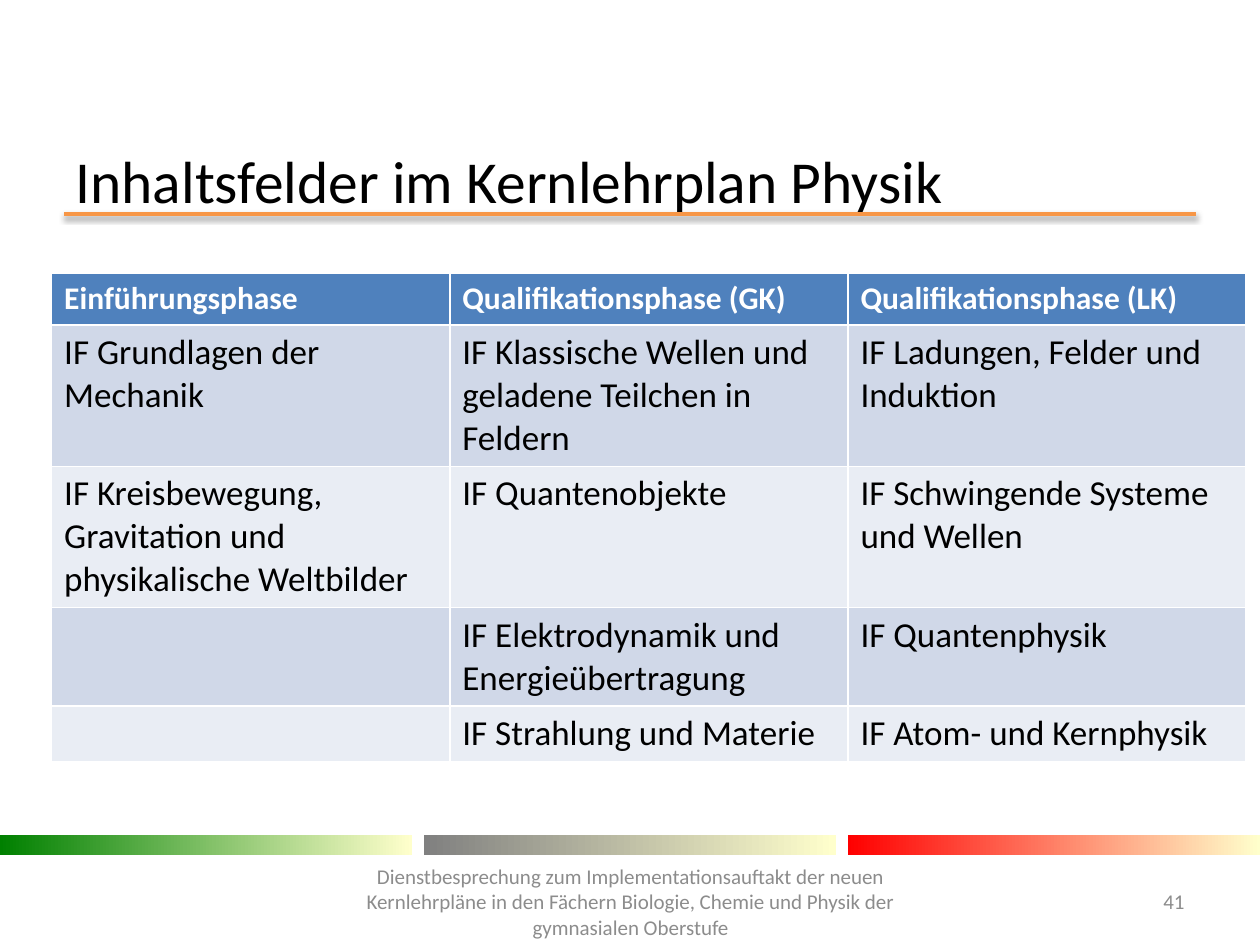
from dataclasses import dataclass

from lxml import etree
from pptx import Presentation
from pptx.dml.color import RGBColor
from pptx.enum.shapes import MSO_CONNECTOR, MSO_SHAPE
from pptx.enum.text import MSO_ANCHOR, PP_ALIGN
from pptx.oxml.ns import qn
from pptx.util import Inches, Pt

LEFT, CENTER, RIGHT = PP_ALIGN.LEFT, PP_ALIGN.CENTER, PP_ALIGN.RIGHT
TOP, MIDDLE = MSO_ANCHOR.TOP, MSO_ANCHOR.MIDDLE
RECTANGLE, STRAIGHT = MSO_SHAPE.RECTANGLE, MSO_CONNECTOR.STRAIGHT
TITLE_ONLY = 5
WIDTH, HEIGHT = 10, 7.5


@dataclass(frozen=True)
class Theme:
    font: str = "Calibri"
    text: str = "000000"
    muted: str = "8C8C8C"
    accent: str = "F79646"
    header: str = "4F81BD"
    header_text: str = "FFFFFF"
    bands: tuple = ("D0D8E8", "E9EDF4")
    strips: tuple = ("008000", "808080", "FF0000")
    strip_end: str = "FFFFCC"
    title_size: int = 34
    header_size: int = 18
    body_size: int = 20
    footer_size: int = 12


THEME = Theme()

ROWS = [
    ("Einführungsphase", "Qualifikationsphase (GK)", "Qualifikationsphase (LK)"),
    ("IF Grundlagen der Mechanik",
     "IF Klassische Wellen und geladene Teilchen in Feldern",
     "IF Ladungen, Felder und Induktion"),
    ("IF Kreisbewegung, Gravitation und physikalische Weltbilder",
     "IF Quantenobjekte",
     "IF Schwingende Systeme und Wellen"),
    ("", "IF Elektrodynamik und Energieübertragung", "IF Quantenphysik"),
    ("", "IF Strahlung und Materie", "IF Atom- und Kernphysik"),
]
ROW_HEIGHTS = (0.41, 1.11, 1.12, 0.78, 0.43)
FOOTER = ("Dienstbesprechung zum Implementationsauftakt der neuen Kernlehrpläne "
          "in den Fächern Biologie, Chemie und Physik der gymnasialen Oberstufe")


def rgb(color):
    return RGBColor.from_string(color)


def write(tf, text, *, size, color=THEME.text, bold=False, align=LEFT, anchor=TOP):
    tf.word_wrap = True
    tf.vertical_anchor = anchor
    p = tf.paragraphs[0]
    p.alignment = align
    r = p.add_run()
    r.text = text
    r.font.name, r.font.size, r.font.bold = THEME.font, Pt(size), bold
    r.font.color.rgb = rgb(color)


def add_title(s, text):
    title = s.shapes.title
    title.left, title.top = Inches(0.5), Inches(1.23)
    title.width, title.height = Inches(WIDTH - 1), Inches(0.39)
    write(title.text_frame, text, size=THEME.title_size, anchor=MIDDLE)


def add_rule(s, margin, y):
    """Draw the line under the title, with its soft shadow."""
    line = s.shapes.add_connector(STRAIGHT, Inches(margin), Inches(y),
                                  Inches(WIDTH - margin), Inches(y))
    line.line.color.rgb = rgb(THEME.accent)
    line.line.width = Pt(2)
    sp_pr = line.line._get_or_add_ln().getparent()
    effects = etree.SubElement(sp_pr, qn("a:effectLst"))
    shadow = etree.SubElement(effects, qn("a:outerShdw"), blurRad="40000",
                              dist="20000", dir="5400000", rotWithShape="0")
    color = etree.SubElement(shadow, qn("a:srgbClr"), val="000000")
    etree.SubElement(color, qn("a:alpha"), val="38000")


def add_strips(s, y, width, height):
    """Spread the gradient strips evenly over the slide's width."""
    step = (WIDTH - width) / (len(THEME.strips) - 1)
    for i, start in enumerate(THEME.strips):
        sp = s.shapes.add_shape(RECTANGLE, Inches(i * step), Inches(y),
                                Inches(width), Inches(height))
        sp.shadow.inherit = False
        sp.line.fill.background()
        sp.fill.gradient()
        sp.fill.gradient_angle = 0
        for stop, color in zip(sp.fill.gradient_stops, (start, THEME.strip_end)):
            stop.color.rgb = rgb(color)


def add_table(s, x, y, col_width):
    cols = len(ROWS[0])
    table = s.shapes.add_table(len(ROWS), cols, Inches(x), Inches(y),
                               Inches(cols * col_width),
                               Inches(sum(ROW_HEIGHTS))).table
    for col in table.columns:
        col.width = Inches(col_width)
    for i, (row, height) in enumerate(zip(ROWS, ROW_HEIGHTS)):
        table.rows[i].height = Inches(height)
        if i == 0:
            fill = THEME.header
            style = dict(size=THEME.header_size, color=THEME.header_text, bold=True)
        else:
            fill = THEME.bands[(i - 1) % 2]
            style = dict(size=THEME.body_size)
        for j, text in enumerate(row):
            cell = table.cell(i, j)
            cell.fill.solid()
            cell.fill.fore_color.rgb = rgb(fill)
            if text:
                write(cell.text_frame, text, **style)


def add_footer_text(s, text, x, y, width, height, align):
    box = s.shapes.add_textbox(Inches(x), Inches(y), Inches(width), Inches(height))
    write(box.text_frame, text, size=THEME.footer_size, color=THEME.muted,
          align=align, anchor=MIDDLE)


def main():
    prs = Presentation()
    prs.slide_width, prs.slide_height = Inches(WIDTH), Inches(HEIGHT)
    s = prs.slides.add_slide(prs.slide_layouts[TITLE_ONLY])
    add_rule(s, 0.51, 1.7)
    add_strips(s, 6.63, 3.27, 0.16)
    add_title(s, "Inhaltsfelder im Kernlehrplan Physik")
    add_table(s, 0.41, 2.17, 3.16)
    add_footer_text(s, "41", 8.86, 6.95, 0.64, 0.4, RIGHT)
    add_footer_text(s, FOOTER, 2.68, 6.87, 4.65, 0.57, CENTER)
    prs.save("out.pptx")


if __name__ == "__main__":
    main()
